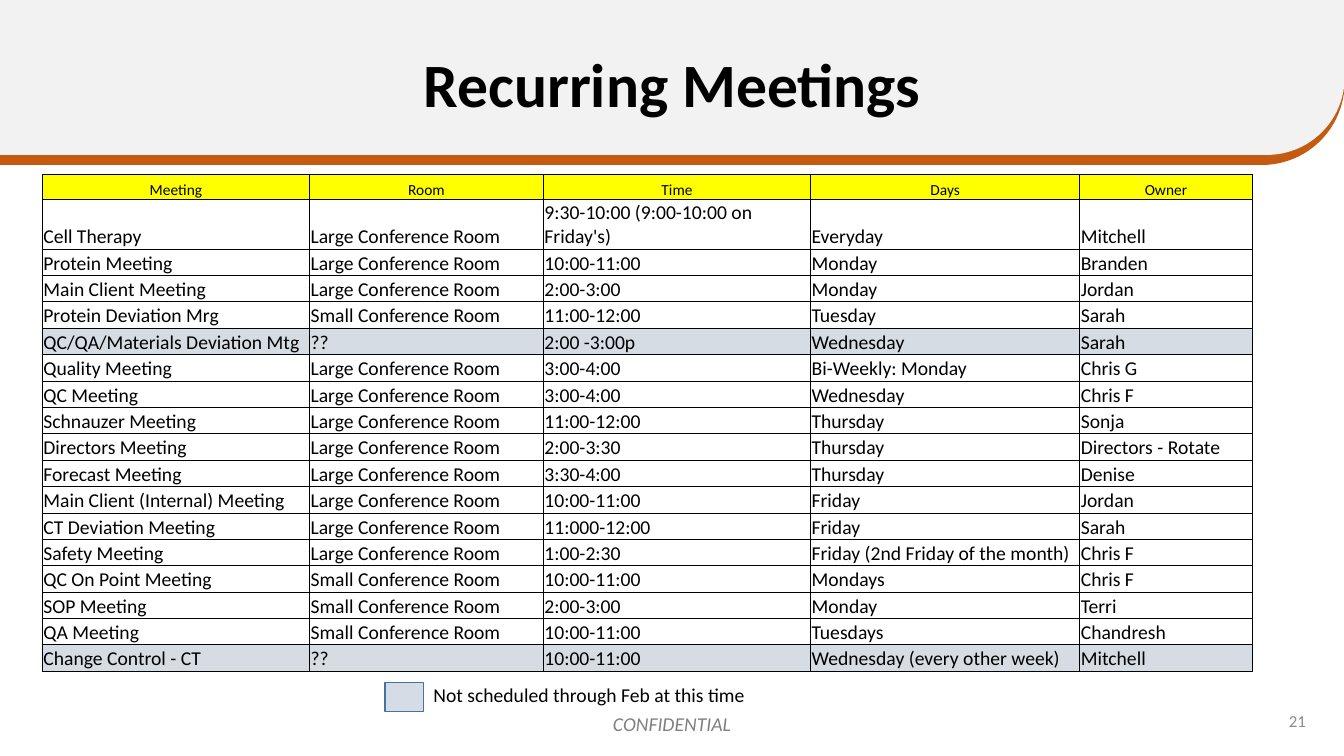
"""Build the slide that lists the recurring meetings."""
import dataclasses
import typing

import lxml.etree
import pptx
import pptx.dml.color
import pptx.enum.shapes
import pptx.enum.text
import pptx.oxml.ns
import pptx.util

EMU_PER_PX = 9144
FONT = "Calibri"
BLACK = "000000"
WHITE = "FFFFFF"
YELLOW = "FFFF00"
UNSCHEDULED = "D6DCE4"
ALIGN = pptx.enum.text.PP_ALIGN
ANCHOR = pptx.enum.text.MSO_ANCHOR
AUTO_SIZE = pptx.enum.text.MSO_AUTO_SIZE
SHAPE = pptx.enum.shapes.MSO_SHAPE

TABLE_LEFT, TABLE_TOP, TABLE_HEIGHT = 42, 173, 493
COLUMN_WIDTHS = (265, 232, 265, 267, 171)
HEADER_HEIGHT, TWO_LINE_HEIGHT = 25, 49
LARGE = "Large Conference Room"
SMALL = "Small Conference Room"


@dataclasses.dataclass(frozen=True)
class Band:
    height: int
    color: str


@dataclasses.dataclass(frozen=True)
class Label:
    text: str
    left: int
    top: int
    width: int
    height: int
    size: int
    color: str
    align: ALIGN
    anchor: ANCHOR = ANCHOR.TOP
    italic: bool = False
    wrap: bool = True
    auto_size: AUTO_SIZE = AUTO_SIZE.SHAPE_TO_FIT_TEXT


@dataclasses.dataclass(frozen=True)
class Row:
    texts: tuple[str, str, str, str, str]
    fill: typing.Optional[str] = None
    size: int = 14
    align: ALIGN = ALIGN.LEFT


BANDS = (Band(163, "C55A11"), Band(153, "F2F2F2"))
LABELS = (
    Label("21", 1005, 695, 300, 40, 12, "8C8C8C", ALIGN.RIGHT, ANCHOR.MIDDLE, auto_size=AUTO_SIZE.NONE),
    Label("CONFIDENTIAL", 532, 701, 269, 34, 14, "808080", ALIGN.CENTER, italic=True),
    Label("Not scheduled through Feb at this time", 420, 673, 332, 34, 14, BLACK, ALIGN.LEFT, wrap=False),
)
ROWS = (
    Row(("Meeting", "Room", "Time", "Days", "Owner"), YELLOW, 11, ALIGN.CENTER),
    Row(("Cell Therapy", LARGE, "9:30-10:00 (9:00-10:00 on Friday's)", "Everyday", "Mitchell")),
    Row(("Protein Meeting", LARGE, "10:00-11:00", "Monday", "Branden")),
    Row(("Main Client Meeting", LARGE, "2:00-3:00", "Monday", "Jordan")),
    Row(("Protein Deviation Mrg", SMALL, "11:00-12:00", "Tuesday", "Sarah"), WHITE),
    Row(("QC/QA/Materials Deviation Mtg", "??", "2:00 -3:00p", "Wednesday", "Sarah"), UNSCHEDULED),
    Row(("Quality Meeting", LARGE, "3:00-4:00", "Bi-Weekly: Monday", "Chris G")),
    Row(("QC Meeting", LARGE, "3:00-4:00", "Wednesday", "Chris F")),
    Row(("Schnauzer Meeting", LARGE, "11:00-12:00", "Thursday", "Sonja")),
    Row(("Directors Meeting", LARGE, "2:00-3:30", "Thursday", "Directors - Rotate")),
    Row(("Forecast Meeting", LARGE, "3:30-4:00", "Thursday", "Denise")),
    Row(("Main Client (Internal) Meeting", LARGE, "10:00-11:00", "Friday", "Jordan")),
    Row(("CT Deviation Meeting", LARGE, "11:000-12:00", "Friday", "Sarah")),
    Row(("Safety Meeting", LARGE, "1:00-2:30", "Friday (2nd Friday of the month)", "Chris F")),
    Row(("QC On Point Meeting", SMALL, "10:00-11:00", "Mondays", "Chris F")),
    Row(("SOP Meeting", SMALL, "2:00-3:00", "Monday", "Terri")),
    Row(("QA Meeting", SMALL, "10:00-11:00", "Tuesdays", "Chandresh")),
    Row(("Change Control - CT", "??", "10:00-11:00", "Wednesday (every other week)", "Mitchell"), UNSCHEDULED),
)


def px(length: float) -> pptx.util.Emu:
    return pptx.util.Emu(round(length * EMU_PER_PX))


def rgb(color: str) -> pptx.dml.color.RGBColor:
    return pptx.dml.color.RGBColor.from_string(color)


def write(frame, text: str, size: int, color: str, align: ALIGN, bold: bool = False, italic: bool = False):
    para = frame.paragraphs[0]
    para.alignment = align
    span = para.add_run()
    span.text = text
    span.font.name = FONT
    span.font.size = pptx.util.Pt(size)
    span.font.color.rgb = rgb(color)
    span.font.bold = bold
    span.font.italic = italic
    return para


def draw_shape(page, kind: SHAPE, left: int, top: int, width: int, height: int, fill: str, line: str):
    shape = page.shapes.add_shape(kind, px(left), px(top), px(width), px(height))
    shape.shadow.inherit = False
    shape.fill.solid()
    shape.fill.fore_color.rgb = rgb(fill)
    shape.line.color.rgb = rgb(line)
    shape.line.width = pptx.util.Pt(1)
    return shape


def draw_band(page, band: Band) -> None:
    shape = draw_shape(page, SHAPE.SNIP_ROUND_RECTANGLE, 0, 0, 1333, band.height, band.color, band.color)
    shape.adjustments[0] = 0.5
    shape.adjustments[1] = 0
    shape.rotation = 180
    page.shapes.title.element.addprevious(shape.element)


def draw_title(page, text: str) -> None:
    title = page.shapes.title
    title.left, title.top, title.width, title.height = px(92), px(14), px(1150), px(145)
    frame = title.text_frame
    frame.auto_size = AUTO_SIZE.NONE
    frame.vertical_anchor = ANCHOR.MIDDLE
    para = write(frame, text, 44, BLACK, ALIGN.CENTER, bold=True)
    para.line_spacing = 0.9


def draw_label(page, label: Label) -> None:
    box = page.shapes.add_textbox(px(label.left), px(label.top), px(label.width), px(label.height))
    frame = box.text_frame
    frame.word_wrap = label.wrap
    frame.auto_size = label.auto_size
    frame.vertical_anchor = label.anchor
    write(frame, label.text, label.size, label.color, label.align, italic=label.italic)


def add_borders(cell) -> None:
    properties = cell._tc.get_or_add_tcPr()
    for side in ("a:lnL", "a:lnR", "a:lnT", "a:lnB"):
        line = lxml.etree.SubElement(properties, pptx.oxml.ns.qn(side), w=str(pptx.util.Pt(0.5)))
        fill = lxml.etree.SubElement(line, pptx.oxml.ns.qn("a:solidFill"))
        lxml.etree.SubElement(fill, pptx.oxml.ns.qn("a:srgbClr"), val=BLACK)


def fill_cell(cell, text: str, row: Row) -> None:
    add_borders(cell)
    if row.fill:
        cell.fill.solid()
        cell.fill.fore_color.rgb = rgb(row.fill)
    else:
        cell.fill.background()
    cell.margin_left = cell.margin_top = cell.margin_right = px(1)
    cell.margin_bottom = 0
    cell.vertical_anchor = ANCHOR.BOTTOM
    write(cell.text_frame, text, row.size, BLACK, row.align)


def draw_table(page) -> None:
    table = page.shapes.add_table(
        len(ROWS), len(COLUMN_WIDTHS), px(TABLE_LEFT), px(TABLE_TOP), px(sum(COLUMN_WIDTHS)), px(TABLE_HEIGHT)
    ).table
    table.first_row = table.horz_banding = False
    for column, width in zip(table.columns, COLUMN_WIDTHS):
        column.width = px(width)
    one_line = (TABLE_HEIGHT - HEADER_HEIGHT - TWO_LINE_HEIGHT) / (len(ROWS) - 2)
    heights = [HEADER_HEIGHT, TWO_LINE_HEIGHT] + [one_line] * (len(ROWS) - 2)
    for table_row, height, row in zip(table.rows, heights, ROWS):
        table_row.height = px(height)
        for cell, text in zip(table_row.cells, row.texts):
            fill_cell(cell, text, row)


def main() -> None:
    deck = pptx.Presentation()
    deck.slide_width, deck.slide_height = px(1333), px(750)
    page = deck.slides.add_slide(deck.slide_layouts.get_by_name("Title Only"))
    for band in BANDS:
        draw_band(page, band)
    draw_title(page, "Recurring Meetings")
    draw_table(page)
    draw_shape(page, SHAPE.RECTANGLE, 382, 677, 38, 29, "D6DCE5", "43739E")
    for label in LABELS:
        draw_label(page, label)
    deck.save("out.pptx")


if __name__ == "__main__":
    main()
